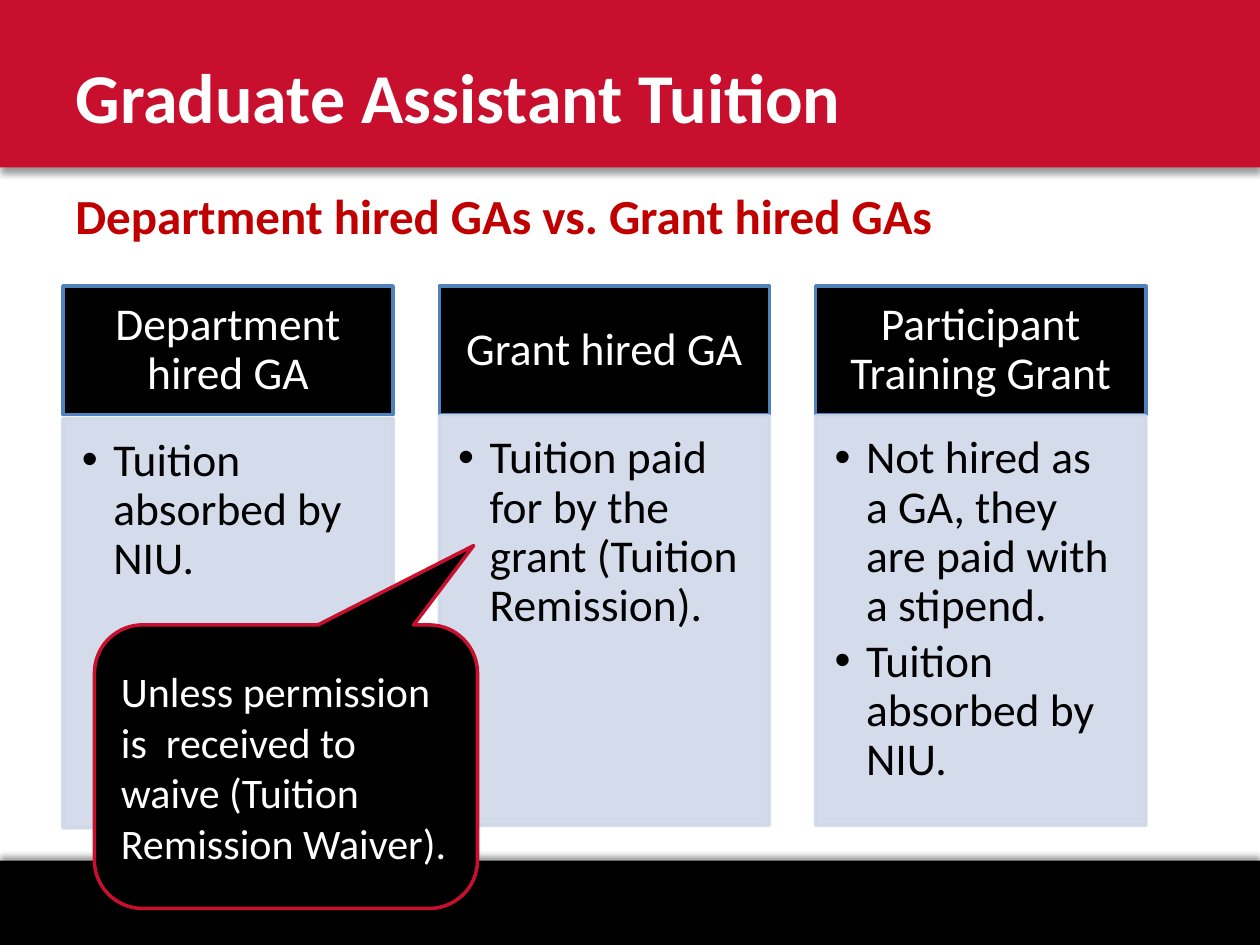
"""Build the slide comparing tuition for three kinds of graduate assistant."""
from lxml.etree import SubElement
from pptx import Presentation
from pptx.dml.color import RGBColor
from pptx.enum.shapes import MSO_SHAPE as SHAPE
from pptx.enum.text import MSO_ANCHOR as ANCHOR, PP_ALIGN as ALIGN
from pptx.oxml.ns import qn
from pptx.util import Inches, Pt

COLORS = {"black": "000000", "white": "FFFFFF", "red": "C8102E",
          "dark_red": "C00000", "blue": "4F81BD", "pale": "D0D8E8"}


def add_box(kind, x, y, w, h, fill, line=None):
    sp = s.shapes.add_shape(kind, Inches(x), Inches(y), Inches(w), Inches(h))
    sp.shadow.inherit = False
    sp.fill.solid()
    sp.fill.fore_color.rgb = RGBColor.from_string(COLORS[fill])
    if line:
        sp.line.color.rgb = RGBColor.from_string(COLORS[line])
        sp.line.width = Pt(2)
    else:
        sp.line.fill.background()
    return sp


def set_text(sp, text, size, color, anchor=ANCHOR.TOP, align=ALIGN.LEFT,
             bold=False, margins=(0.1, 0.05, 0.1, 0.05)):
    tf = sp.text_frame
    tf.text = text
    tf.word_wrap = True
    tf.vertical_anchor = anchor
    (tf.margin_left, tf.margin_top,
     tf.margin_right, tf.margin_bottom) = map(Inches, margins)
    for p in tf.paragraphs:
        p.alignment = align
        for r in p.runs:
            r.font.name = "Calibri"
            r.font.size = Pt(size)
            r.font.bold = bold
            r.font.color.rgb = RGBColor.from_string(COLORS[color])
    return tf


W, H = 10, 7.5
prs = Presentation()
prs.slide_width, prs.slide_height = Inches(W), Inches(H)
s = prs.slides.add_slide(prs.slide_layouts[5])
title = s.shapes.title

top_h, foot_h = 1.33, 0.67
for y, h, fill, angle in ((H - foot_h, foot_h, "black", 270),
                          (0, top_h, "red", 90)):
    bar = add_box(SHAPE.RECTANGLE, 0, y, W, h, fill)
    effects = bar.element.spPr.find(qn("a:effectLst"))
    shadow = SubElement(effects, qn("a:outerShdw"), blurRad=str(Pt(4)),
                        dist=str(Pt(3)), dir=str(angle * 60000),
                        algn="t", rotWithShape="0")
    tint = SubElement(shadow, qn("a:srgbClr"), val=COLORS["black"])
    SubElement(tint, qn("a:alpha"), val="40000")
    title.element.addprevious(bar.element)

left, head_y, head_h, body_h = 0.5, 2.27, 1.02, 3.25
col_w = 2.62
pitch = col_w * 1.14
columns = (
    ("Department hired GA", ["Tuition  absorbed by NIU."], 3.32),
    ("Grant hired GA",
     ["Tuition paid for by the grant (Tuition Remission)."], 3.3),
    ("Participant Training Grant",
     ["Not hired as a GA, they are paid with a stipend.",
      "Tuition absorbed by NIU."], 3.3),
)
for i, (heading, points, body_y) in enumerate(columns):
    x = left + i * pitch
    head = add_box(SHAPE.RECTANGLE, x, head_y, col_w, head_h, "black", "blue")
    tf = set_text(head, heading, 26, "white", ANCHOR.MIDDLE, ALIGN.CENTER,
                  margins=(0.2, 0.12, 0.2, 0.12))
    tf.paragraphs[0].line_spacing = 0.9

    body = add_box(SHAPE.RECTANGLE, x, body_y, col_w, body_h, "pale", "pale")
    for clr in body.element.spPr.iter(qn("a:srgbClr")):
        SubElement(clr, qn("a:alpha"), val="90000")
    tf = set_text(body, "\n".join(points), 26, "black",
                  margins=(0.15, 0.15, 0.2, 0.23))
    for p in tf.paragraphs:
        pPr = p._p.get_or_add_pPr()
        pPr.set("marL", str(Inches(0.25)))
        pPr.set("indent", str(Inches(-0.25)))
        SubElement(pPr, qn("a:buFont"), typeface="Arial")
        SubElement(pPr, qn("a:buChar"), char="•")
        p.level = 1
        p.line_spacing = 0.9
        p.space_after = Pt(4)

title.left, title.top = Inches(left), Inches(0.17)
title.width, title.height = Inches(8.25), Inches(1.17)
set_text(title, "Graduate Assistant Tuition", 40, "white", ANCHOR.MIDDLE,
         bold=True)

callout = add_box(SHAPE.ROUNDED_RECTANGULAR_CALLOUT, 0.75, 4.96, 3.04, 2.25,
                  "black", "red")
for i, value in enumerate((0.49, -0.78, 0.17)):
    callout.adjustments[i] = value
set_text(callout, "Unless permission is  received to waive "
         "(Tuition Remission Waiver).", 24, "white", ANCHOR.MIDDLE)

subtitle = s.shapes.add_textbox(Inches(left), Inches(1.42), Inches(8.33),
                                Inches(0.58))
set_text(subtitle, "Department hired GAs vs. Grant hired GAs", 28, "dark_red",
         bold=True)

prs.save("out.pptx")
